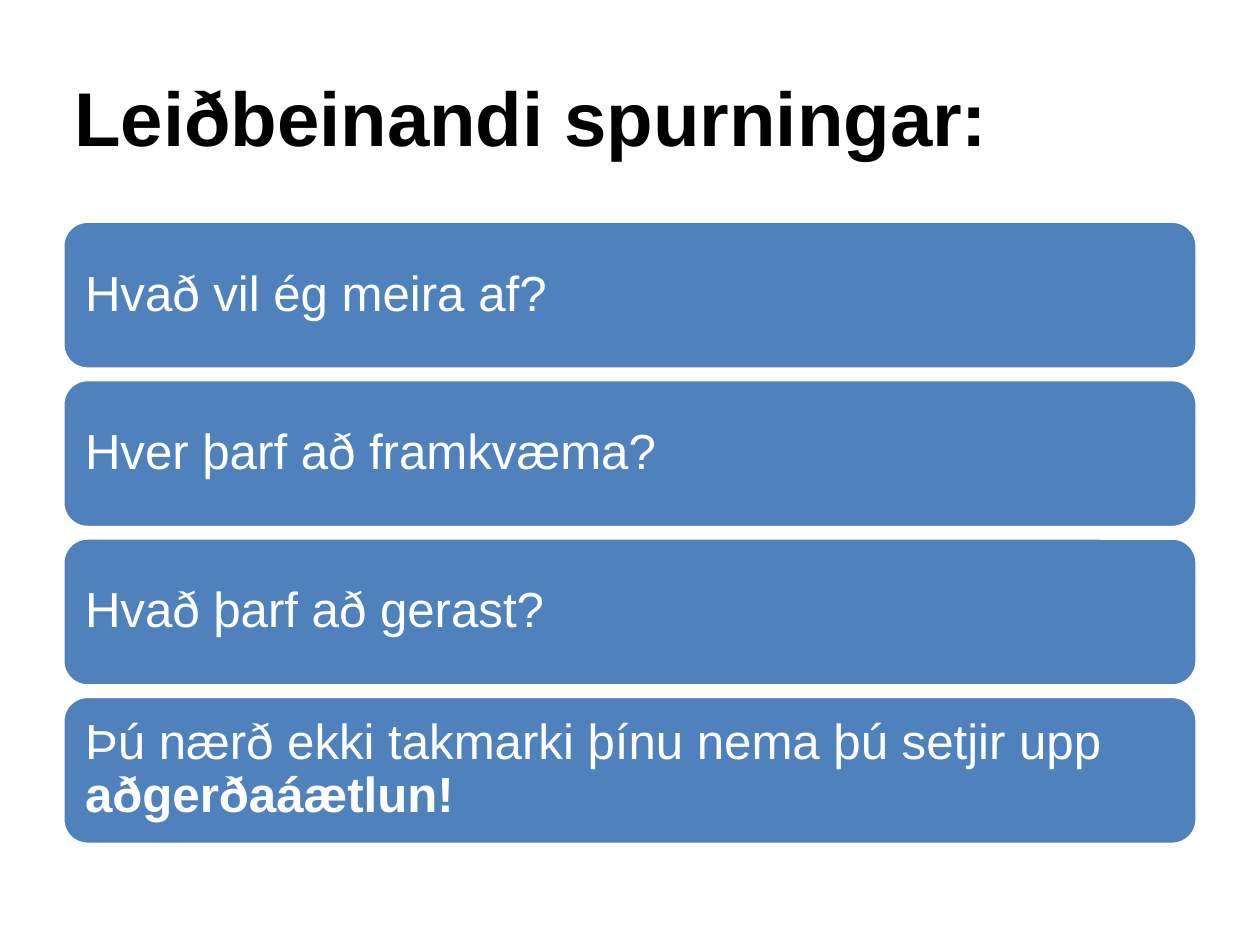
from pptx import Presentation
from pptx.dml.color import RGBColor
from pptx.enum.shapes import MSO_SHAPE as Shape
from pptx.enum.text import MSO_ANCHOR as Anchor, PP_ALIGN as Align
from pptx.util import Cm, Inches, Pt

WIDTH, HEIGHT = 28, 21
LEFT, CONTENT_WIDTH = WIDTH * 0.05, WIDTH * 0.9
TITLE_TOP, TITLE_HEIGHT = HEIGHT * 0.04, HEIGHT / 6
FIRST_ROW, BAR_HEIGHT, GAP = 4.92, 3.28, 0.24

QUESTIONS = [
    [("Hvað vil ég meira af?", False)],
    [("Hver þarf að framkvæma?", False)],
    [("Hvað þarf að gerast?", False)],
    [("Þú nærð ekki takmarki þínu nema þú setjir upp ", False), ("aðgerðaáætlun!", True)],
]


def color(value):
    return RGBColor.from_string(value)


def content_box(top, height):
    return [Cm(length) for length in (LEFT, top, CONTENT_WIDTH, height)]


def write(shape, runs, size, text_color, inset):
    frame = shape.text_frame
    frame.word_wrap = True
    frame.vertical_anchor = Anchor.MIDDLE
    frame.margin_left = frame.margin_right = Inches(inset)
    frame.margin_top = frame.margin_bottom = Inches(inset)
    paragraph = frame.paragraphs[0]
    paragraph.alignment = Align.LEFT
    for text, bold in runs:
        run = paragraph.add_run()
        run.text = text
        run.font.name = "Arial"
        run.font.size = Pt(size)
        run.font.bold = bold
        run.font.color.rgb = color(text_color)
    return paragraph


def add_title(slide, text):
    title = slide.shapes.add_textbox(*content_box(TITLE_TOP, TITLE_HEIGHT))
    write(title, [(text, True)], 48, "000000", 0.1)


def add_question(slide, row, runs):
    top = FIRST_ROW + row * (BAR_HEIGHT + GAP)
    bar = slide.shapes.add_shape(Shape.ROUNDED_RECTANGLE, *content_box(top, BAR_HEIGHT))
    bar.shadow.inherit = False
    bar.fill.solid()
    bar.fill.fore_color.rgb = color("4F81BD")
    bar.line.color.rgb = color("FFFFFF")
    bar.line.width = Pt(2)
    write(bar, runs, 31, "FFFFFF", 0.13).line_spacing = 0.9


def main():
    presentation = Presentation()
    presentation.slide_width = Cm(WIDTH)
    presentation.slide_height = Cm(HEIGHT)
    slide = presentation.slides.add_slide(presentation.slide_layouts[6])
    add_title(slide, "Leiðbeinandi spurningar:")
    for row, runs in enumerate(QUESTIONS):
        add_question(slide, row, runs)
    presentation.save("out.pptx")


if __name__ == "__main__":
    main()
